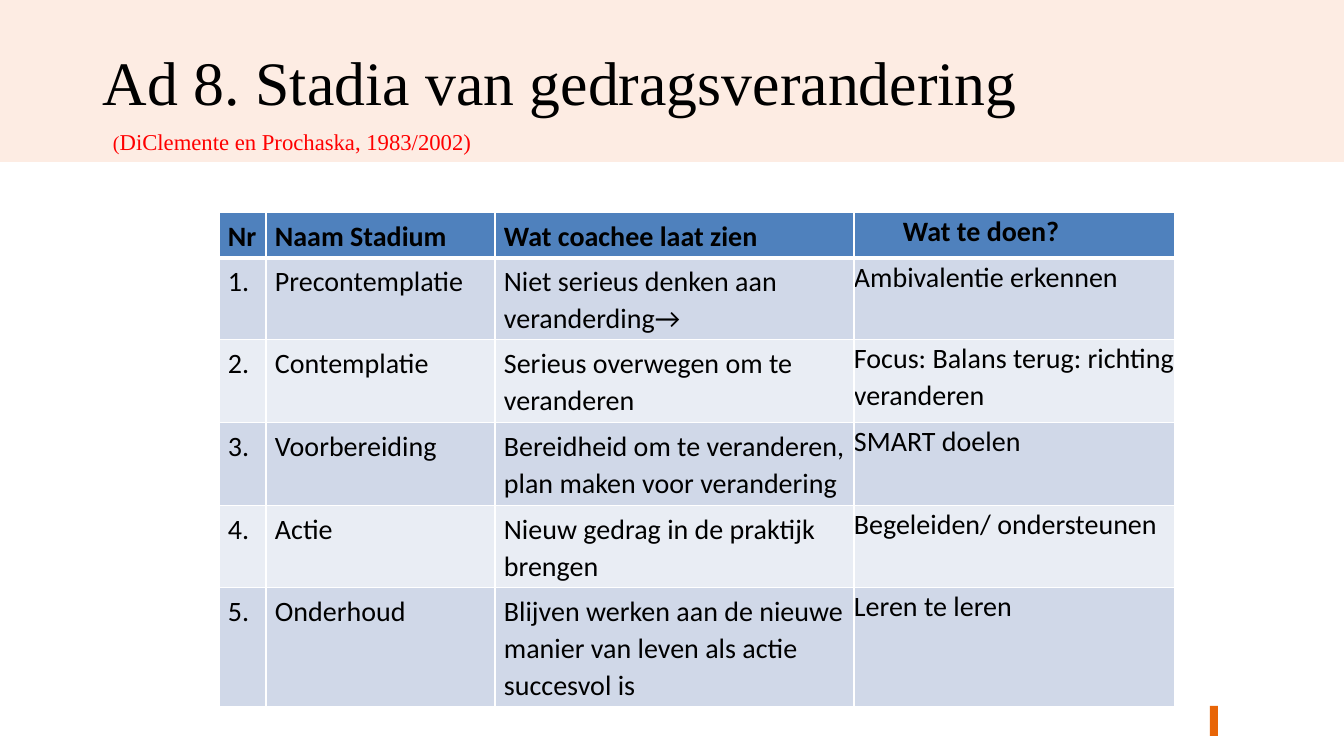
from lxml import etree
from pptx import Presentation
from pptx.dml.color import RGBColor
from pptx.enum.shapes import MSO_SHAPE
from pptx.enum.text import MSO_ANCHOR
from pptx.oxml.ns import qn
from pptx.util import Pt

RECT = MSO_SHAPE.RECTANGLE
TOP = MSO_ANCHOR.TOP
PX = 914400 / 100.8
COLORS = {
    "band": "FDECE3", "accent": "E86507", "black": "000000", "red": "FF0000",
    "header": "4F81BD", "odd": "D0D8E8", "even": "E9EDF4", "white": "FFFFFF",
}
ROWS = [
    ("Nr", "Naam Stadium", "Wat coachee laat zien", "Wat te doen?"),
    ("1.", "Precontemplatie", "Niet serieus denken aan veranderding→",
     "Ambivalentie erkennen"),
    ("2.", "Contemplatie", "Serieus overwegen om te veranderen",
     "Focus: Balans terug: richting veranderen"),
    ("3.", "Voorbereiding",
     "Bereidheid om te veranderen, plan maken voor verandering",
     "SMART doelen"),
    ("4.", "Actie", "Nieuw gedrag in de praktijk brengen",
     "Begeleiden/ ondersteunen"),
    ("5.", "Onderhoud",
     "Blijven werken aan de nieuwe manier van leven als actie succesvol is",
     "Leren te leren"),
]
COL_WIDTHS = (47, 229, 359, 321)
ROW_HEIGHTS = (45, 82, 83, 83, 82, 119)


def px(n):
    return round(n * PX)


def rgb(name):
    return RGBColor.from_string(COLORS[name])


class Slide:
    """Style and drawing methods for the current slide."""
    title_font = "Times New Roman"
    table_font = "Calibri"
    table_size = 20

    def __init__(self, prs):
        self.s = prs.slides.add_slide(prs.slide_layouts[6])

    def rect(self, x, y, w, h, color):
        sp = self.s.shapes.add_shape(RECT, px(x), px(y), px(w), px(h))
        sp.shadow.inherit = False
        sp.fill.solid()
        sp.fill.fore_color.rgb = rgb(color)
        sp.line.fill.background()

    def run(self, p, text, font, size, color, bold=False):
        r = p.add_run()
        r.text = text
        r.font.name = font
        r.font.size = Pt(size)
        r.font.bold = bold
        r.font.color.rgb = rgb(color)

    def heading(self, x, y, w, h, title, source):
        """Title line with the indented source runs below it."""
        tf = self.s.shapes.add_textbox(px(x), px(y), px(w), px(h)).text_frame
        tf.word_wrap = True
        tf.vertical_anchor = TOP
        tf.margin_left = tf.margin_right = px(10)
        tf.margin_top, tf.margin_bottom = px(11), 0
        p = tf.paragraphs[0]
        p.line_spacing = 0.9
        self.run(p, title, self.title_font, 44.1, "black")
        p = tf.add_paragraph()
        p._p.get_or_add_pPr().set("marL", str(px(10)))
        p.line_spacing = 0.9
        p.space_before = Pt(9)
        for text, size in source:
            self.run(p, text, self.title_font, size, "red")

    def borders(self, cell, **widths):
        """White cell borders; widths in points by side, in schema order."""
        tcPr = cell._tc.get_or_add_tcPr()
        for i, (side, width) in enumerate(widths.items()):
            ln = etree.Element(qn("a:ln" + side), w=str(Pt(width)))
            fill = etree.SubElement(ln, qn("a:solidFill"))
            etree.SubElement(fill, qn("a:srgbClr"), val=COLORS["white"])
            tcPr.insert(i, ln)

    def cell(self, cell, text, row, last):
        header = row == 0
        cell.fill.solid()
        cell.fill.fore_color.rgb = rgb(
            "header" if header else "odd" if row % 2 else "even")
        self.borders(cell, L=1, R=1, T=3 if row == 1 else 1,
                     B=3 if header else 1)
        cell.vertical_anchor = TOP
        cell.margin_left = cell.margin_right = px(0 if last else 9)
        cell.margin_top = cell.margin_bottom = px(0 if last else 5)
        p = cell.text_frame.paragraphs[0]
        if header and last:
            p._p.get_or_add_pPr().set("indent", str(px(49)))
        p.line_spacing = 1.07
        p.space_after = Pt(8)
        self.run(p, text, self.table_font, self.table_size, "black", header)

    def table(self, x, y, widths, heights, rows):
        table = self.s.shapes.add_table(
            len(rows), len(widths), px(x), px(y),
            px(sum(widths)), px(sum(heights))).table
        for col, width in zip(table.columns, widths):
            col.width = px(width)
        for i, (height, texts) in enumerate(zip(heights, rows)):
            table.rows[i].height = px(height)
            for j, text in enumerate(texts):
                self.cell(table.cell(i, j), text, i, j == len(widths) - 1)


def main():
    prs = Presentation()
    prs.slide_width, prs.slide_height = px(1344), px(756)
    slide = Slide(prs)
    slide.rect(0, 0, 1344, 162, "band")
    slide.rect(1210, 706, 8, 30, "accent")
    slide.heading(93, 41, 1001, 86, "Ad 8. Stadia van gedragsverandering",
                  [("(", 14.4), ("DiClemente en Prochaska, 1983/2002)", 16.2)])
    slide.table(219, 212, COL_WIDTHS, ROW_HEIGHTS, ROWS)
    prs.save("out.pptx")


if __name__ == "__main__":
    main()
